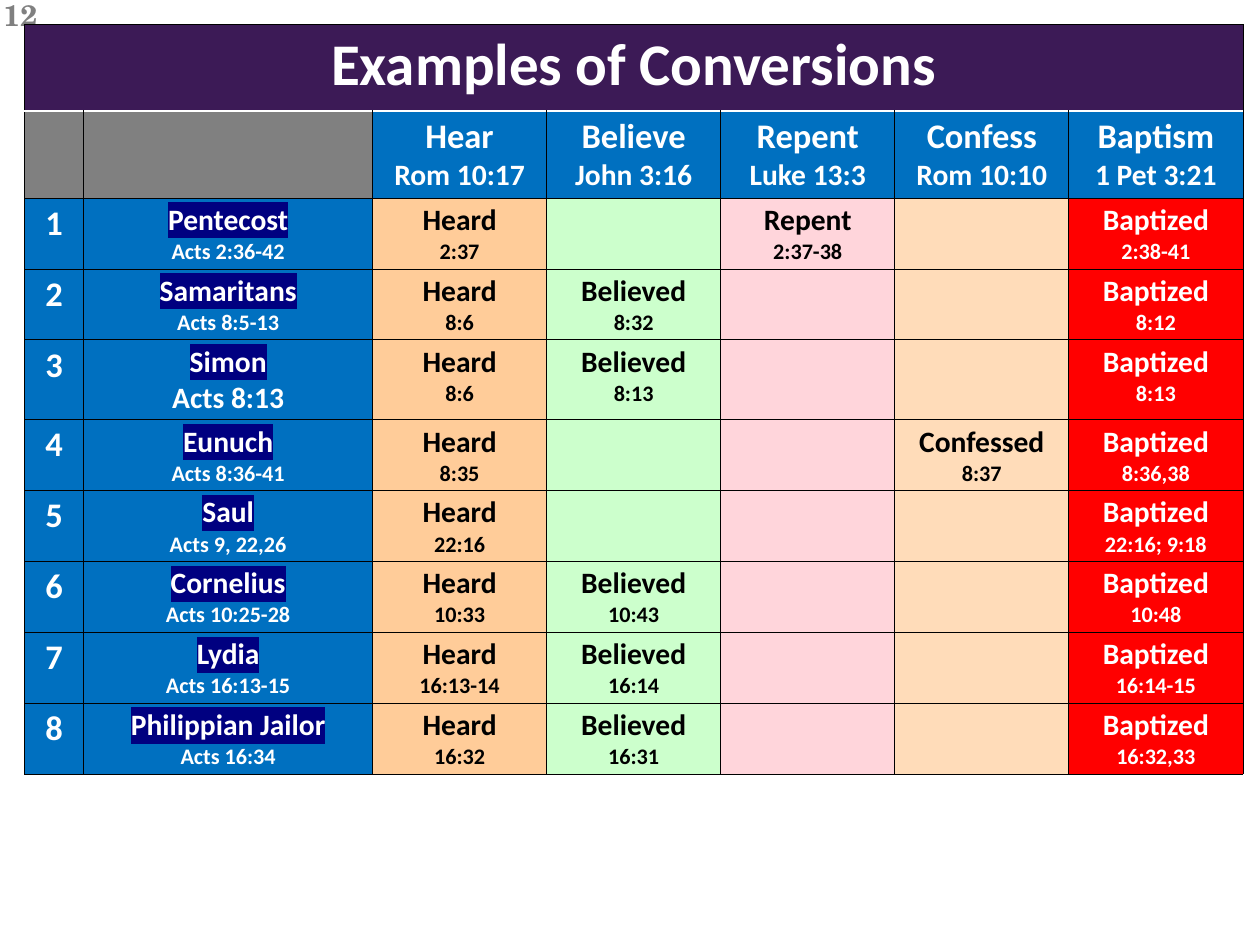
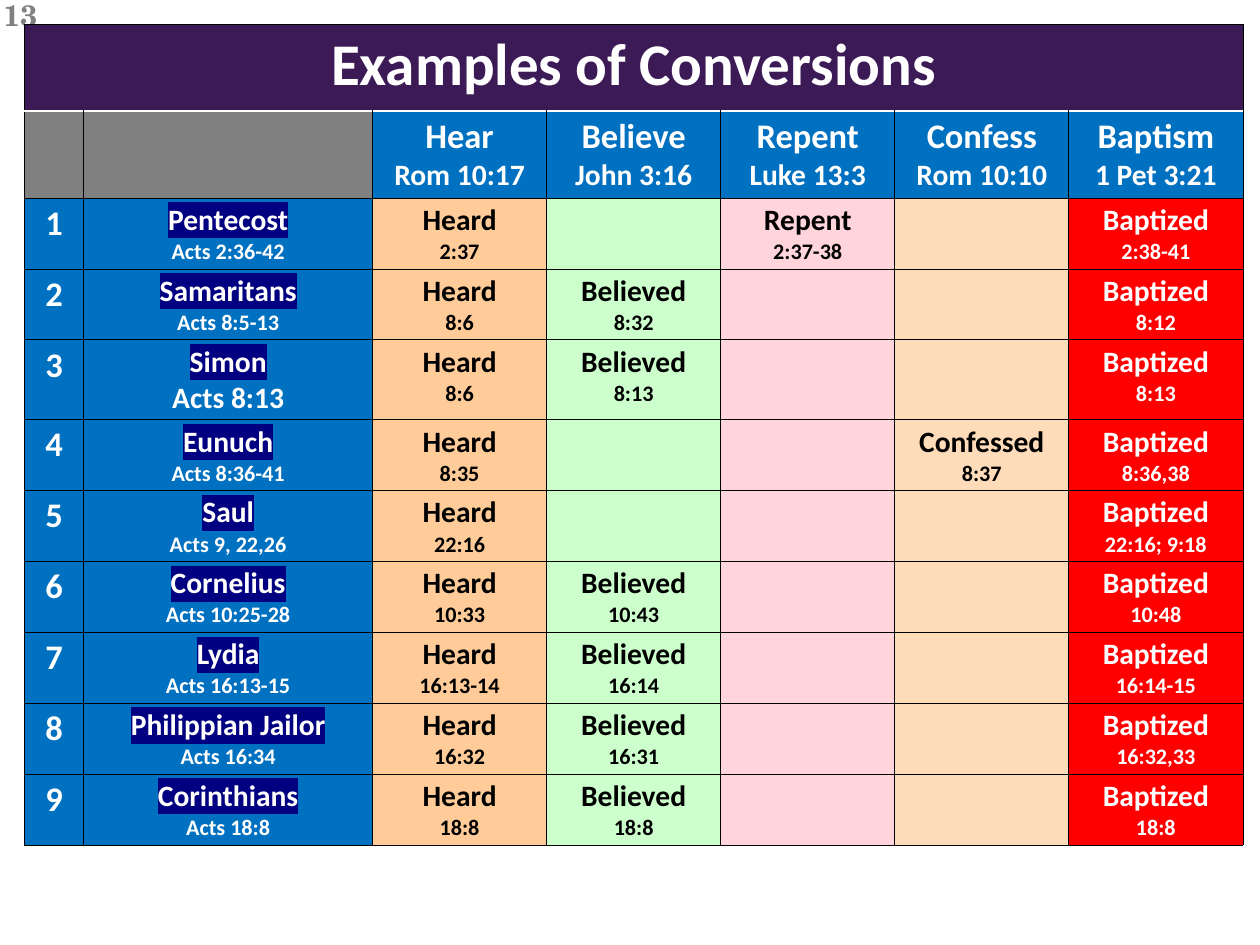
import pptx
import pptx.dml.color
import pptx.enum.text
import pptx.oxml
import pptx.oxml.ns
import pptx.util

Cm, Pt = pptx.util.Cm, pptx.util.Pt
RGBColor = pptx.dml.color.RGBColor

TITLE = "Examples of Conversions"
STEPS = [  # heading, verse, word in the cells
    ("Hear", "Rom 10:17", "Heard"),
    ("Believe", "John 3:16", "Believed"),
    ("Repent", "Luke 13:3", "Repent"),
    ("Confess", "Rom 10:10", "Confessed"),
    ("Baptism", "1 Pet 3:21", "Baptized"),
]
CONVERSIONS = [  # who, passage, then one verse for each step
    ("Pentecost", "Acts 2:36-42", "2:37", "", "2:37-38", "", "2:38-41"),
    ("Samaritans", "Acts 8:5-13", "8:6", "8:32", "", "", "8:12"),
    ("Simon", "Acts 8:13", "8:6", "8:13", "", "", "8:13"),
    ("Eunuch", "Acts 8:36-41", "8:35", "", "", "8:37", "8:36,38"),
    ("Saul", "Acts 9, 22,26", "22:16", "", "", "", "22:16; 9:18"),
    ("Cornelius", "Acts 10:25-28", "10:33", "10:43", "", "", "10:48"),
    ("Lydia", "Acts 16:13-15", "16:13-14", "16:14", "", "", "16:14-15"),
    ("Philippian Jailor", "Acts 16:34", "16:32", "16:31", "", "", "16:32,33"),
    ("Corinthians", "Acts 18:8", "18:8", "18:8", "", "", "18:8"),
]
PAGES = [("12", 8), ("13", 9)]  # page number, conversions shown
LARGE_PASSAGES = {"Simon"}

WHITE = RGBColor(0xFF, 0xFF, 0xFF)
BLACK = RGBColor(0x00, 0x00, 0x00)
GRAY = RGBColor(0x80, 0x80, 0x80)
PURPLE = RGBColor(0x3C, 0x1A, 0x56)
BLUE = RGBColor(0x00, 0x70, 0xC0)
NAVY = RGBColor(0x00, 0x00, 0x80)
STEP_FILLS = [
    RGBColor(0xFF, 0xCC, 0x99),
    RGBColor(0xCC, 0xFF, 0xCC),
    RGBColor(0xFF, 0xD5, 0xDB),
    RGBColor(0xFF, 0xDC, 0xB9),
    RGBColor(0xFF, 0x00, 0x00),
]
STEP_INKS = [BLACK] * 4 + [WHITE]

TABLE_FONT, NUMBER_FONT = "Calibri", "TeX Gyre Schola"
COLUMN_WIDTHS = [Cm(1.7), Cm(8.28)] + [Cm(4.99)] * len(STEPS)
HEAD_HEIGHT, ROW_HEIGHT = Cm(2.49), Cm(1.98)
TABLE_EDGE = Cm(0.7)
THIN, THICK = (BLACK, Pt(0.75)), (WHITE, Pt(2))


def set_font(r, size, color, name=TABLE_FONT):
    r.font.size, r.font.bold, r.font.name = Pt(size), True, name
    r.font.color.rgb = color


def highlight(r, color):
    mark = pptx.oxml.parse_xml(
        f'<a:highlight {pptx.oxml.ns.nsdecls("a")}><a:srgbClr val="{color}"/></a:highlight>')
    r.font._element.find(pptx.oxml.ns.qn("a:solidFill")).addnext(mark)


def set_borders(cell, top, bottom):
    tc_pr = cell._tc.get_or_add_tcPr()
    for side, (color, width) in zip("LRTB", (THIN, THIN, top, bottom)):
        tc_pr.append(pptx.oxml.parse_xml(
            f'<a:ln{side} {pptx.oxml.ns.nsdecls("a")} w="{width}">'
            f'<a:solidFill><a:srgbClr val="{color}"/></a:solidFill></a:ln{side}>'))


def fill_cell(cell, fill, lines=(), ink=WHITE, top=THIN, bottom=THIN):
    """Format a cell; lines holds (text, size) pairs, one per paragraph."""
    set_borders(cell, top, bottom)
    cell.fill.solid()
    cell.fill.fore_color.rgb = fill
    if not lines:
        return
    tf = cell.text_frame
    tf.text = "\n".join(text for text, _ in lines)
    for p, (_, size) in zip(tf.paragraphs, lines):
        p.alignment = pptx.enum.text.PP_ALIGN.CENTER
        set_font(p.runs[0], size, ink)


def add_page_number(s, number):
    tf = s.shapes.add_textbox(Cm(-0.15), Cm(-0.2), Cm(3.4), Cm(0.84)).text_frame
    tf.word_wrap = True
    tf.text = number
    set_font(tf.paragraphs[0].runs[0], 24, GRAY, NUMBER_FONT)


def add_conversion_table(s, conversions):
    heights = [HEAD_HEIGHT] * 2 + [ROW_HEIGHT] * len(conversions)
    table = s.shapes.add_table(
        len(heights), len(COLUMN_WIDTHS), TABLE_EDGE, TABLE_EDGE,
        sum(COLUMN_WIDTHS), sum(heights)).table
    table.first_row = table.horz_banding = False
    for column, width in zip(table.columns, COLUMN_WIDTHS):
        column.width = width
    for row, height in zip(table.rows, heights):
        row.height = height

    table.cell(0, 0).merge(table.cell(0, len(COLUMN_WIDTHS) - 1))
    fill_cell(table.cell(0, 0), PURPLE, [(TITLE, 48)], bottom=THICK)

    for col in range(2):
        fill_cell(table.cell(1, col), GRAY, top=THICK)
    for col, (heading, verse, _) in enumerate(STEPS, 2):
        fill_cell(table.cell(1, col), BLUE, [(heading, 28), (verse, 24)], top=THICK)

    for row, (who, passage, *verses) in enumerate(conversions, 2):
        fill_cell(table.cell(row, 0), BLUE, [(str(row - 1), 28)])
        who_cell = table.cell(row, 1)
        passage_size = 24 if who in LARGE_PASSAGES else 18
        fill_cell(who_cell, BLUE, [(who, 24), (passage, passage_size)])
        highlight(who_cell.text_frame.paragraphs[0].runs[0], NAVY)
        cells = zip(STEPS, verses, STEP_FILLS, STEP_INKS)
        for col, ((_, _, word), verse, fill, ink) in enumerate(cells, 2):
            lines = [(word, 24), (verse, 18)] if verse else []
            fill_cell(table.cell(row, col), fill, lines, ink)


def main():
    prs = pptx.Presentation()
    prs.slide_width, prs.slide_height = Cm(36.12), Cm(27.1)
    blank = prs.slide_layouts.get_by_name("Blank")
    for number, count in PAGES:
        s = prs.slides.add_slide(blank)
        add_page_number(s, number)
        add_conversion_table(s, CONVERSIONS[:count])
    prs.save("out.pptx")


if __name__ == "__main__":
    main()
